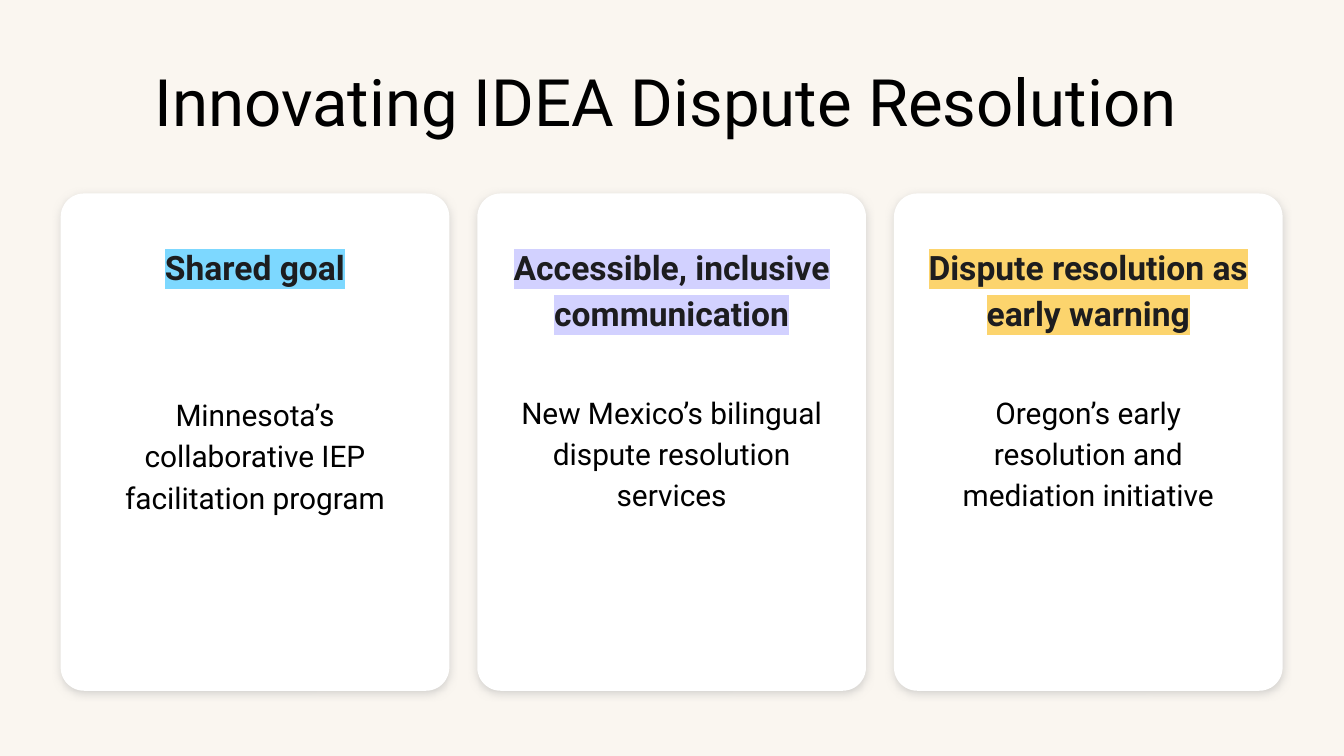
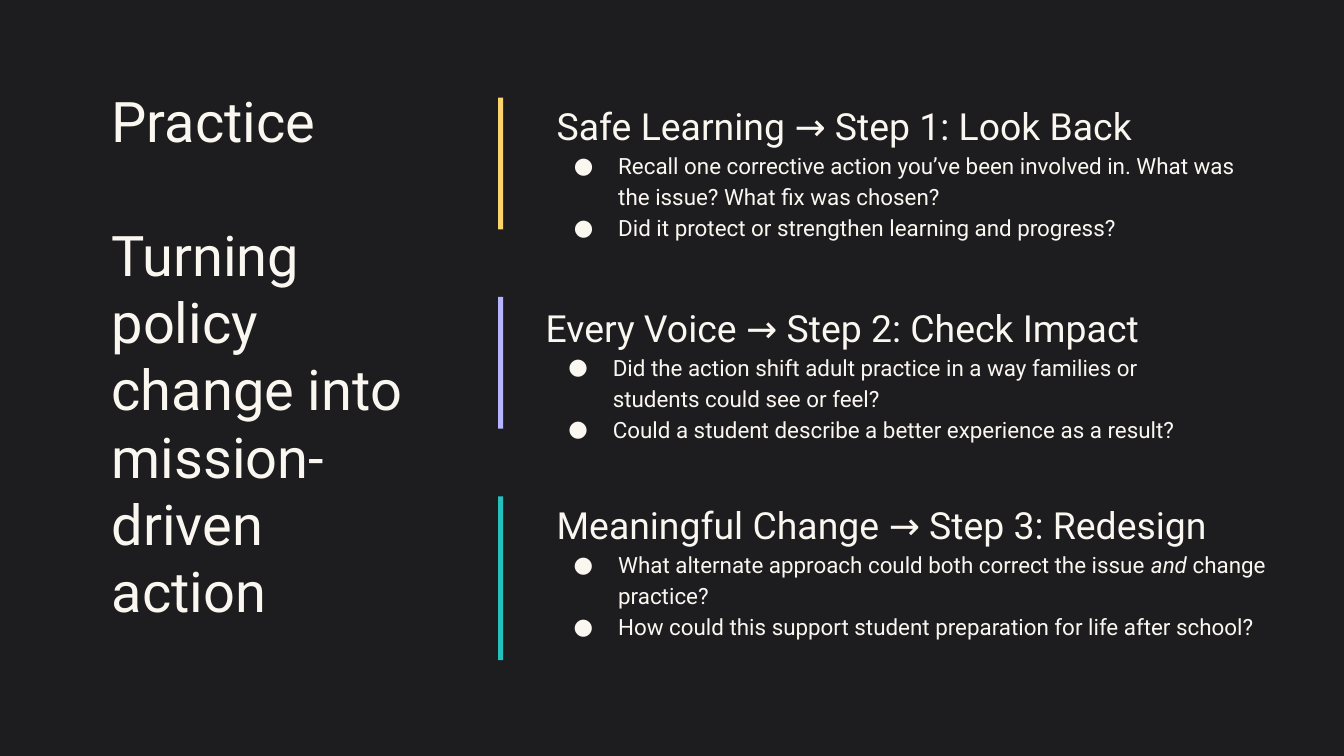
from dataclasses import dataclass

from lxml import etree
from pptx import Presentation
from pptx.dml.color import RGBColor as Rgb
from pptx.enum.shapes import MSO_SHAPE as Shape
from pptx.enum.text import MSO_ANCHOR as Anchor, PP_ALIGN as Align
from pptx.oxml.ns import qn
from pptx.util import Pt


@dataclass(frozen=True)
class Theme:
    font: str = "Roboto"
    cream: str = "FAF6F0"
    ink: str = "1D1D1F"
    black: str = "000000"
    white: str = "FFFFFF"
    shadow: str = "ADADAD"
    yellow: str = "FCD46D"
    sky: str = "7DD8FF"
    lilac: str = "D2D1FF"
    violet: str = "B6B4FF"
    teal: str = "23C2BD"
    title: int = 35
    side_title: int = 30
    step: int = 20
    card_head: int = 18
    card_body: int = 16
    bullet: int = 12
    spacing: float = 1.15


THEME = Theme()

# Heading, highlight, space before the body, body
CARDS = [
    ("Shared goal", THEME.sky, 56,
     "Minnesota’s collaborative IEP facilitation program"),
    ("Accessible, inclusive communication", THEME.lilac, 30,
     "New Mexico’s bilingual dispute resolution services"),
    ("Dispute resolution as early warning", THEME.yellow, 30,
     "Oregon’s early resolution and mediation initiative"),
]

# Bar colour, bar height, text box (left, top, width, height), heading indent,
# heading, bullets; each bullet is a list of (text, italic)
STEPS = [
    (THEME.yellow, 70.6, (295.2, 51.8, 375.8, 54), 3,
     "Safe Learning → Step 1: Look Back",
     [[("Recall one corrective action you’ve been involved in. "
        "What was the issue? What fix was chosen?", False)],
      [("Did it protect or strengthen learning and progress?", False)]]),
    (THEME.violet, 70.6, (292.3, 159.8, 369.4, 54), 0,
     "Every Voice → Step 2: Check Impact",
     [[("Did the action shift adult practice in a way families "
        "or students could see or feel?", False)],
      [("Could a student describe a better experience as a result?", False)]]),
    (THEME.teal, 87.8, (295.2, 265.7, 393.1, 84.2), 3,
     "Meaningful Change → Step 3: Redesign",
     [[("What alternate approach could both correct the issue ", False),
       ("and", True), (" change practice?", False)],
      [("How could this support student preparation for life after school?",
        False)]]),
]


def add_color(parent, tag, color):
    """Append a DrawingML element that holds one RGB colour."""
    holder = etree.SubElement(parent, qn(tag))
    return etree.SubElement(holder, qn("a:srgbClr"), val=color)


def new_page(deck, color):
    page = deck.slides.add_slide(deck.slide_layouts[6])
    page.background.fill.solid()
    page.background.fill.fore_color.rgb = Rgb.from_string(color)
    return page


def set_frame(frame, insets=(0, 0, 0, 0)):
    frame.word_wrap = True
    frame.vertical_anchor = Anchor.TOP
    (frame.margin_left, frame.margin_top,
     frame.margin_right, frame.margin_bottom) = map(Pt, insets)
    return frame


def add_text(page, box, insets=(0, 0, 0, 0)):
    return set_frame(page.shapes.add_textbox(*map(Pt, box)).text_frame, insets)


def add_shape(page, kind, box, color):
    shape = page.shapes.add_shape(kind, *map(Pt, box))
    shape.shadow.inherit = False
    shape.fill.solid()
    shape.fill.fore_color.rgb = Rgb.from_string(color)
    shape.line.fill.background()
    return shape


def write(frame, text, size, color, bold=False, align=Align.LEFT,
          spacing=1.0, before=0):
    """Fill the first empty paragraph, or add one; text may be styled runs."""
    para = frame.paragraphs[0]
    if para.runs:
        para = frame.add_paragraph()
    para.alignment = align
    para.line_spacing = spacing
    para.space_before = Pt(before)
    para.font.name = THEME.font
    para.font.size = Pt(size)
    para.font.bold = bold
    para.font.color.rgb = Rgb.from_string(color)
    for words, italic in [(text, False)] if isinstance(text, str) else text:
        span = para.add_run()
        span.text = words
        if italic:
            span.font.italic = True
    return para


def indent(para, left, hanging=0):
    props = para._p.get_or_add_pPr()
    props.set("marL", str(Pt(left)))
    props.set("indent", str(Pt(-hanging)))
    return props


def add_bullet(para, color):
    props = indent(para, 36, 23.8)
    defaults = props.find(qn("a:defRPr"))
    add_color(props, "a:buClr", color)
    etree.SubElement(props, qn("a:buFont"), typeface=THEME.font)
    etree.SubElement(props, qn("a:buChar"), char="●")
    props.append(defaults)  # the schema wants the defaults last


def add_card(page, box, heading, highlight, gap, body):
    card = add_shape(page, Shape.ROUNDED_RECTANGLE, box, THEME.white)
    card.adjustments[0] = 0.06

    # Soft shadow below the card
    effects = card._element.spPr.find(qn("a:effectLst"))
    color = add_color(effects, "a:outerShdw", THEME.shadow)
    etree.SubElement(color, qn("a:alpha"), val="50000")
    shadow = color.getparent()
    shadow.set("blurRad", str(Pt(4.5)))
    shadow.set("dist", str(Pt(1.5)))
    shadow.set("dir", "5400000")
    shadow.set("algn", "t")
    shadow.set("rotWithShape", "0")

    # Highlighted heading, then the example
    frame = set_frame(card.text_frame, (14.4, 21.6, 14.4, 7.2))
    style = dict(align=Align.CENTER, spacing=THEME.spacing)
    para = write(frame, heading, THEME.card_head, THEME.ink, True, **style)
    add_color(para.runs[0]._r.get_or_add_rPr(), "a:highlight", highlight)
    write(frame, body, THEME.card_body, THEME.black, before=gap, **style)


def add_step(page, top, bar_color, bar_height, box, heading_indent,
             heading, bullets):
    add_shape(page, Shape.RECTANGLE, (266.8, top, 2.8, bar_height), bar_color)
    frame = add_text(page, box, (0, 0, 7.2, 0))
    para = write(frame, heading, THEME.step, THEME.cream, spacing=THEME.spacing)
    indent(para, heading_indent)
    for bullet in bullets:
        para = write(frame, bullet, THEME.bullet, THEME.cream,
                     spacing=THEME.spacing)
        add_bullet(para, THEME.cream)


def build_cards_page(deck):
    page = new_page(deck, THEME.cream)
    title = add_text(page, (21.6, 36, 670.3, 54.7))
    write(title, "Innovating IDEA Dispute Resolution", THEME.title,
          THEME.black, align=Align.CENTER, spacing=0.95)
    left, top, width, height, pitch = 32.5, 103.7, 208.2, 266.4, 223.2
    for column, card in enumerate(CARDS):
        add_card(page, (left + column * pitch, top, width, height), *card)


def build_practice_page(deck):
    page = new_page(deck, THEME.ink)

    # Title column
    title = add_text(page, (59.8, 46.1, 164.9, 97.2))
    lines = [("Practice", 0), ("Turning policy change into mission-", 36),
             ("driven action", 0)]
    for text, before in lines:
        write(title, text, THEME.side_title, THEME.cream, before=before)

    # Steps, each beside its bar
    for row, step in enumerate(STEPS):
        add_step(page, 52.3 + row * 106.8, *step)


def main():
    deck = Presentation()
    deck.slide_width, deck.slide_height = Pt(720), Pt(405)
    build_cards_page(deck)
    build_practice_page(deck)
    deck.save("out.pptx")


if __name__ == "__main__":
    main()
